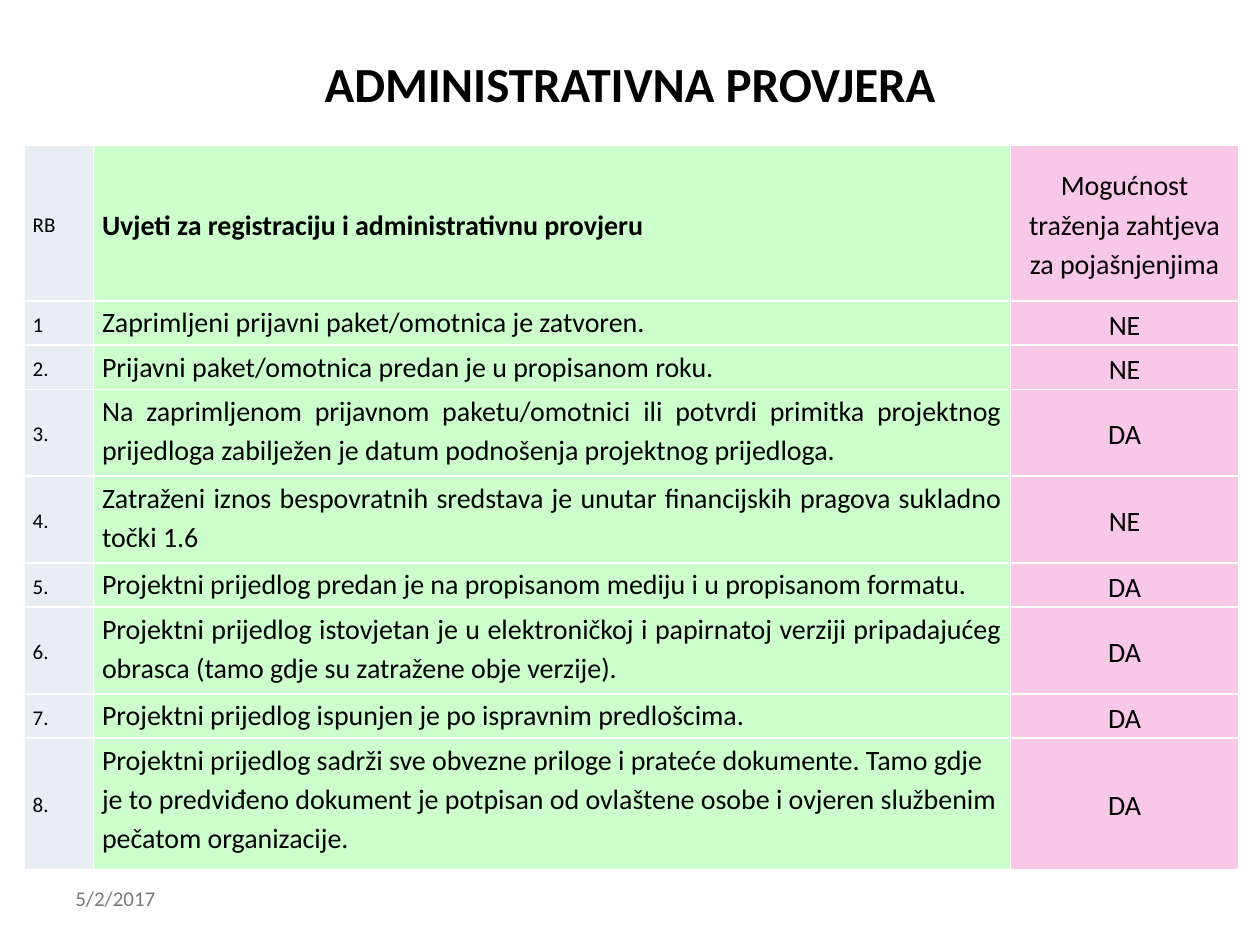
from dataclasses import dataclass

from lxml.etree import SubElement
from pptx import Presentation
from pptx.dml.color import RGBColor
from pptx.enum.text import MSO_ANCHOR, PP_ALIGN
from pptx.oxml import parse_xml
from pptx.oxml.ns import nsdecls, qn
from pptx.util import Inches, Pt


@dataclass(frozen=True)
class Theme:
    font: str = "Calibri"
    text: str = "000000"
    muted: str = "777877"
    border: str = "FFFFFF"
    column_fills: tuple = ("E9EDF4", "CCFFCC", "F9C7E8")
    title_size: int = 28
    body_size: int = 16
    small_size: int = 12


THEME = Theme()
LEFT, CENTER, JUSTIFY = PP_ALIGN.LEFT, PP_ALIGN.CENTER, PP_ALIGN.JUSTIFY
COLUMN_WIDTHS = (0.55, 7.28, 1.81)
HEADERS = (
    "RB",
    "Uvjeti za registraciju i administrativnu provjeru",
    "Mogućnost traženja zahtjeva za pojašnjenjima",
)
HEADER_HEIGHT = 1.24
LINE_HEIGHTS = {1: 0.35, 2: 0.69, 3: 1.04}
CONDITIONS = (
    ("1", "Zaprimljeni prijavni paket/omotnica je zatvoren.", "NE", 1, JUSTIFY),
    ("2.", "Prijavni paket/omotnica predan je u propisanom roku.", "NE", 1, JUSTIFY),
    ("3.", "Na zaprimljenom prijavnom paketu/omotnici ili potvrdi primitka projektnog "
     "prijedloga zabilježen je datum podnošenja projektnog prijedloga.", "DA", 2, JUSTIFY),
    ("4.", "Zatraženi iznos bespovratnih sredstava je unutar financijskih pragova "
     "sukladno točki 1.6", "NE", 2, JUSTIFY),
    ("5.", "Projektni prijedlog predan je na propisanom mediju i u propisanom formatu.",
     "DA", 1, JUSTIFY),
    ("6.", "Projektni prijedlog istovjetan je u elektroničkoj i papirnatoj verziji "
     "pripadajućeg obrasca (tamo gdje su zatražene obje verzije).", "DA", 2, JUSTIFY),
    ("7.", "Projektni prijedlog ispunjen je po ispravnim predlošcima.", "DA", 1, LEFT),
    ("8.", "Projektni prijedlog sadrži sve obvezne priloge i prateće dokumente. Tamo gdje "
     "je to predviđeno dokument je potpisan od ovlaštene osobe i ovjeren službenim "
     "pečatom organizacije.", "DA", 3, LEFT),
)


def write(frame, text, size, color=THEME.text, bold=False, align=LEFT):
    frame.text = text
    para = frame.paragraphs[0]
    para.alignment = align
    font = para.runs[0].font
    font.name, font.size, font.bold = THEME.font, Pt(size), bold
    font.color.rgb = RGBColor.from_string(color)
    return para


def add_label(page, box, text, size, anchor=MSO_ANCHOR.TOP, **style):
    frame = page.shapes.add_textbox(*map(Inches, box)).text_frame
    frame.word_wrap = True
    frame.vertical_anchor = anchor
    write(frame, text, size, **style)


def add_borders(cell):
    properties = cell._tc.get_or_add_tcPr()
    for index, side in enumerate(("lnL", "lnR", "lnT", "lnB")):
        line = parse_xml(f'<a:{side} {nsdecls("a")} w="{Pt(1)}"/>')
        fill = SubElement(line, qn("a:solidFill"))
        SubElement(fill, qn("a:srgbClr"), val=THEME.border)
        properties.insert(index, line)


def fill_cell(cell, text, column, align, header):
    cell.margin_left = cell.margin_right = Inches(0.07)
    cell.margin_top = cell.margin_bottom = 0
    top = column == 1 and not header
    cell.vertical_anchor = MSO_ANCHOR.TOP if top else MSO_ANCHOR.MIDDLE
    cell.fill.solid()
    cell.fill.fore_color.rgb = RGBColor.from_string(THEME.column_fills[column])
    size = THEME.small_size if column == 0 else THEME.body_size
    para = write(cell.text_frame, text, size, bold=header and column == 1, align=align)
    para.line_spacing = 1.15
    add_borders(cell)


def add_conditions_table(page, box):
    heights = [HEADER_HEIGHT] + [LINE_HEIGHTS[row[3]] for row in CONDITIONS]
    table = page.shapes.add_table(
        len(heights), len(COLUMN_WIDTHS), *map(Inches, box)).table
    for column, width in zip(table.columns, COLUMN_WIDTHS):
        column.width = Inches(width)
    for row, height in zip(table.rows, heights):
        row.height = Inches(height)
    rows = [(HEADERS, LEFT)] + [(row[:3], row[4]) for row in CONDITIONS]
    for row_index, (texts, align) in enumerate(rows):
        for column, (text, alignment) in enumerate(zip(texts, (LEFT, align, CENTER))):
            fill_cell(table.cell(row_index, column), text, column, alignment, row_index == 0)


def main():
    deck = Presentation()
    deck.slide_width, deck.slide_height = Inches(10), Inches(7.5)
    page = deck.slides.add_slide(deck.slide_layouts[6])
    add_label(page, (0.5, 6.98, 2.33, 0.4), "5/2/2017", THEME.small_size,
              color=THEME.muted)
    add_label(page, (0.5, 0.3, 9, 0.72), "ADMINISTRATIVNA PROVJERA", THEME.title_size,
              anchor=MSO_ANCHOR.MIDDLE, bold=True, align=CENTER)
    add_conditions_table(page, (0.19, 1.15, 9.64, 5.77))
    deck.save("out.pptx")


if __name__ == "__main__":
    main()
